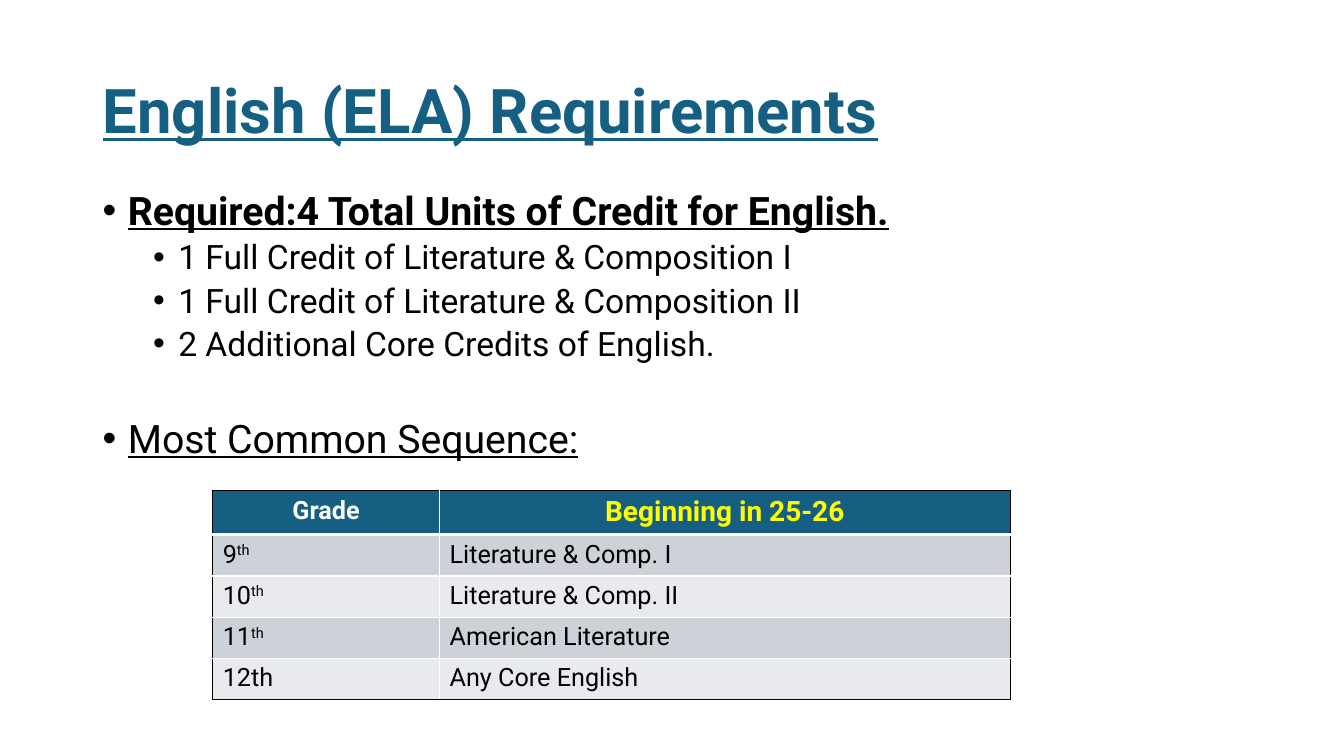
from dataclasses import dataclass

from lxml import etree
from pptx import Presentation
from pptx.dml.color import RGBColor
from pptx.enum.text import MSO_ANCHOR, MSO_AUTO_SIZE, PP_ALIGN
from pptx.oxml.ns import qn
from pptx.util import Inches, Pt

LEFT, CENTER = PP_ALIGN.LEFT, PP_ALIGN.CENTER

# Content
TITLE = "English (ELA) Requirements"
REQUIRED = "Required:4 Total Units of Credit for English."
CREDITS = [
    "1 Full Credit of Literature & Composition I",
    "1 Full Credit of Literature & Composition II",
    "2 Additional Core Credits of English.",
]
SEQUENCE = "Most Common Sequence:"
HEADINGS = ("Grade", "Beginning in 25-26")
# Grade number, raised ending, course
COURSES = [
    ("9", "th", "Literature & Comp. I"),
    ("10", "th", "Literature & Comp. II"),
    ("11", "th", "American Literature"),
    ("12th", "", "Any Core English"),
]


@dataclass(frozen=True)
class Theme:
    font: str = "Roboto"
    accent: str = "156082"
    ink: str = "000000"
    paper: str = "FFFFFF"
    highlight: str = "FFFF00"
    bands: tuple = ("CCD2D8", "E8EAED")
    title: int = 44
    point: int = 28
    credit: int = 24
    heading: int = 20
    cell: int = 18


THEME = Theme()

# Layout in inches
SLIDE_W, SLIDE_H = 13.33, 7.5
MARGIN, TEXT_W = 0.92, 11.5
TITLE_TOP, TITLE_H = 0.4, 1.45
BODY_TOP, BODY_H = TITLE_TOP + TITLE_H, 4.91
TABLE_LEFT, TABLE_TOP, ROW_H = 2.11, 4.87, 0.41
COLUMN_WIDTHS = (2.25, 5.66)
BULLET_GAP, LEVEL_STEP = 0.25, 0.5


def write(paragraph, text, *, size, color=THEME.ink, bold=False, underline=False,
          align=LEFT, spacing=None, before=None, raised=False):
    paragraph.alignment = align
    if spacing is not None:
        paragraph.line_spacing = spacing
    if before is not None:
        paragraph.space_before = Pt(before)
    run = paragraph.add_run()
    run.text = text
    font = run.font
    font.name, font.size = THEME.font, Pt(size)
    font.bold, font.underline = bold, underline
    font.color.rgb = RGBColor.from_string(color)
    if raised:
        run._r.get_or_add_rPr().set("baseline", "30000")


def add_bullet(paragraph, level):
    props = paragraph._p.get_or_add_pPr()
    props.set("marL", str(Inches(BULLET_GAP + level * LEVEL_STEP)))
    props.set("indent", str(-Inches(BULLET_GAP)))
    etree.SubElement(props, qn("a:buFont"), typeface="Arial")
    etree.SubElement(props, qn("a:buChar"), char="•")


def add_border(cell, side, color, width):
    line = etree.SubElement(cell._tc.get_or_add_tcPr(), qn(f"a:ln{side}"), w=str(Pt(width)))
    fill = etree.SubElement(line, qn("a:solidFill"))
    etree.SubElement(fill, qn("a:srgbClr"), val=color)


def style_cell(cell, row, column, last_row, last_column):
    # Dark outer frame, light inner rules, thicker rule under the headings
    outer = {"L": column == 0, "R": column == last_column,
             "T": row == 0, "B": row == last_row}
    for side, is_outer in outer.items():
        under_headings = (side, row) in (("B", 0), ("T", 1))
        add_border(cell, side, THEME.ink if is_outer else THEME.paper,
                   3 if under_headings else 1)
    cell.fill.solid()
    color = THEME.accent if row == 0 else THEME.bands[(row - 1) % 2]
    cell.fill.fore_color.rgb = RGBColor.from_string(color)


def add_title(slide):
    title = slide.shapes.title
    title.left, title.top = Inches(MARGIN), Inches(TITLE_TOP)
    title.width, title.height = Inches(TEXT_W), Inches(TITLE_H)
    frame = title.text_frame
    frame.auto_size = MSO_AUTO_SIZE.NONE
    frame.vertical_anchor = MSO_ANCHOR.MIDDLE
    write(frame.paragraphs[0], TITLE, size=THEME.title, color=THEME.accent,
          bold=True, underline=True, spacing=0.9)


def add_requirements(slide):
    frame = slide.shapes.add_textbox(Inches(MARGIN), Inches(BODY_TOP),
                                     Inches(TEXT_W), Inches(BODY_H)).text_frame
    frame.word_wrap = True
    point = dict(size=THEME.point, underline=True)
    lines = [(REQUIRED, 0, dict(point, bold=True, before=10))]
    lines += [(credit, 1, dict(size=THEME.credit, before=5)) for credit in CREDITS]
    lines.append((SEQUENCE, 0, dict(point, before=40)))
    for index, (text, level, style) in enumerate(lines):
        paragraph = frame.add_paragraph() if index else frame.paragraphs[0]
        write(paragraph, text, spacing=0.9, **style)
        add_bullet(paragraph, level)


def add_sequence_table(slide):
    row_count, column_count = len(COURSES) + 1, len(HEADINGS)
    table = slide.shapes.add_table(
        row_count, column_count, Inches(TABLE_LEFT), Inches(TABLE_TOP),
        Inches(sum(COLUMN_WIDTHS)), Inches(ROW_H * row_count)).table
    for column, width in zip(table.columns, COLUMN_WIDTHS):
        column.width = Inches(width)
    for row in table.rows:
        row.height = Inches(ROW_H)
    for row in range(row_count):
        for column in range(column_count):
            style_cell(table.cell(row, column), row, column,
                       row_count - 1, column_count - 1)

    heading_styles = ((THEME.cell, THEME.paper), (THEME.heading, THEME.highlight))
    for column, (heading, (size, color)) in enumerate(zip(HEADINGS, heading_styles)):
        write(table.cell(0, column).text_frame.paragraphs[0], heading,
              size=size, color=color, bold=True, align=CENTER)
    for row, (grade, ending, course) in enumerate(COURSES, start=1):
        grade_line, course_line = (table.cell(row, column).text_frame.paragraphs[0]
                                   for column in range(column_count))
        write(grade_line, grade, size=THEME.cell)
        if ending:
            write(grade_line, ending, size=THEME.cell, raised=True)
        write(course_line, course, size=THEME.cell)


def main():
    deck = Presentation()
    deck.slide_width, deck.slide_height = Inches(SLIDE_W), Inches(SLIDE_H)
    slide = deck.slides.add_slide(deck.slide_layouts[5])
    add_title(slide)
    add_requirements(slide)
    add_sequence_table(slide)
    deck.save("out.pptx")


if __name__ == "__main__":
    main()
